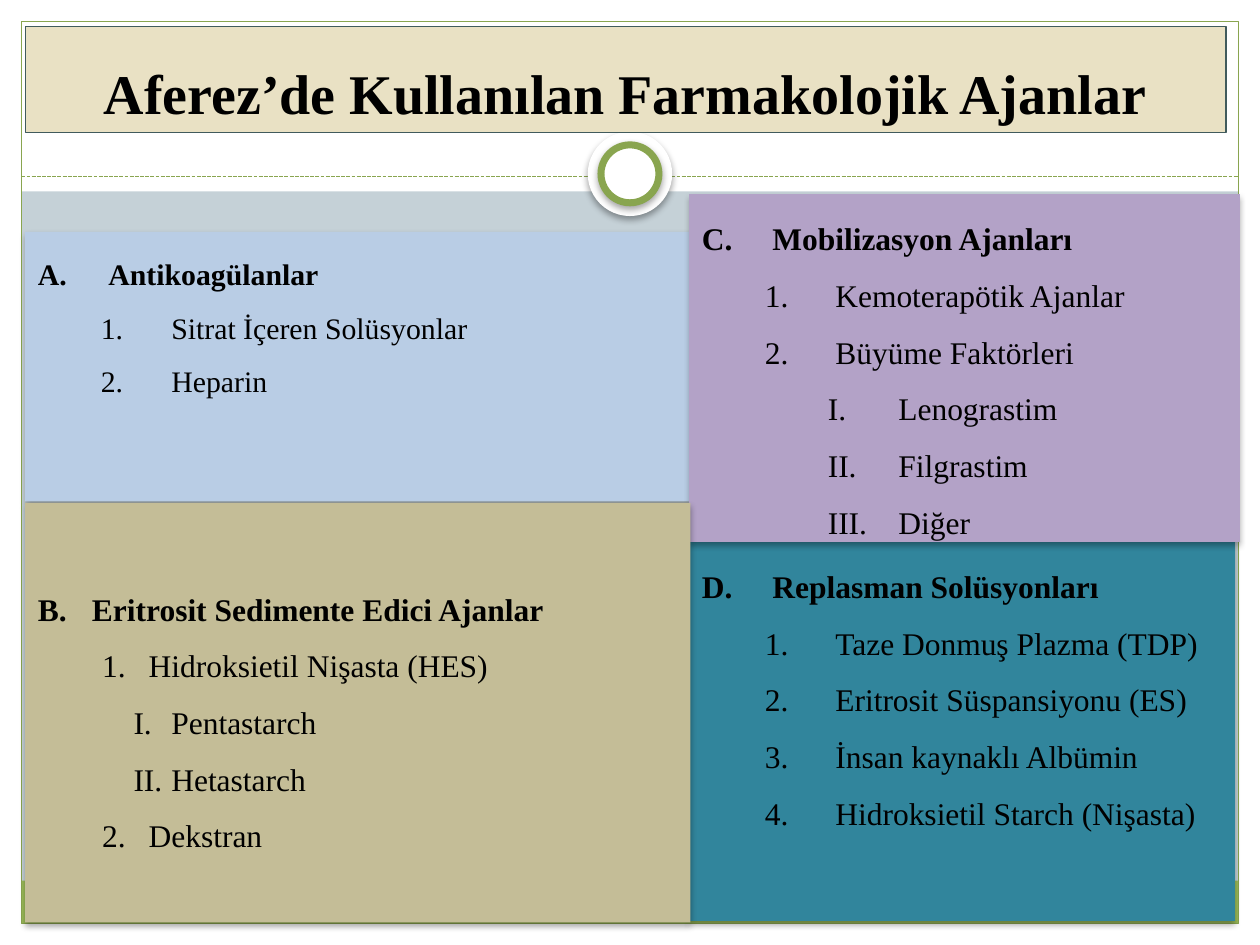
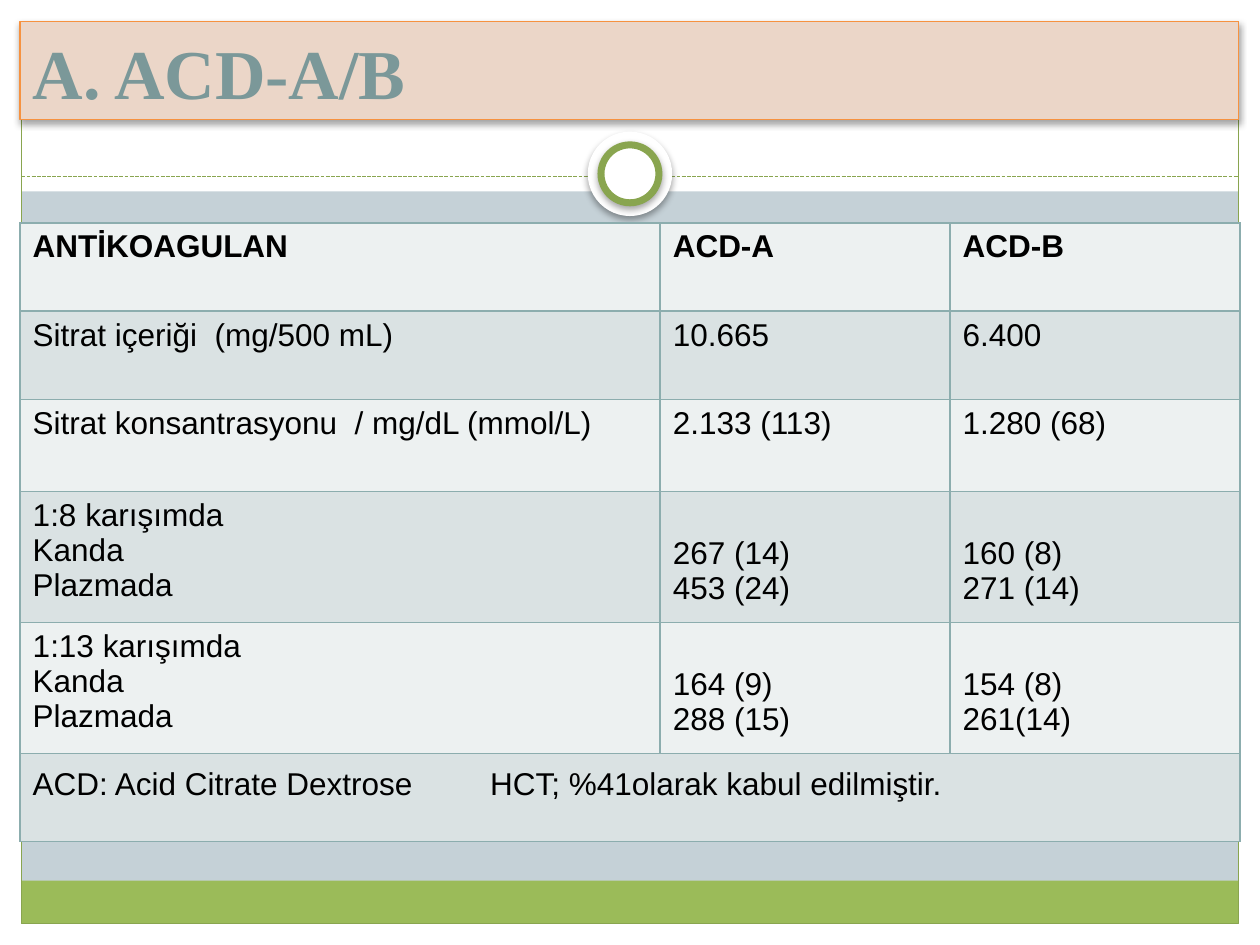
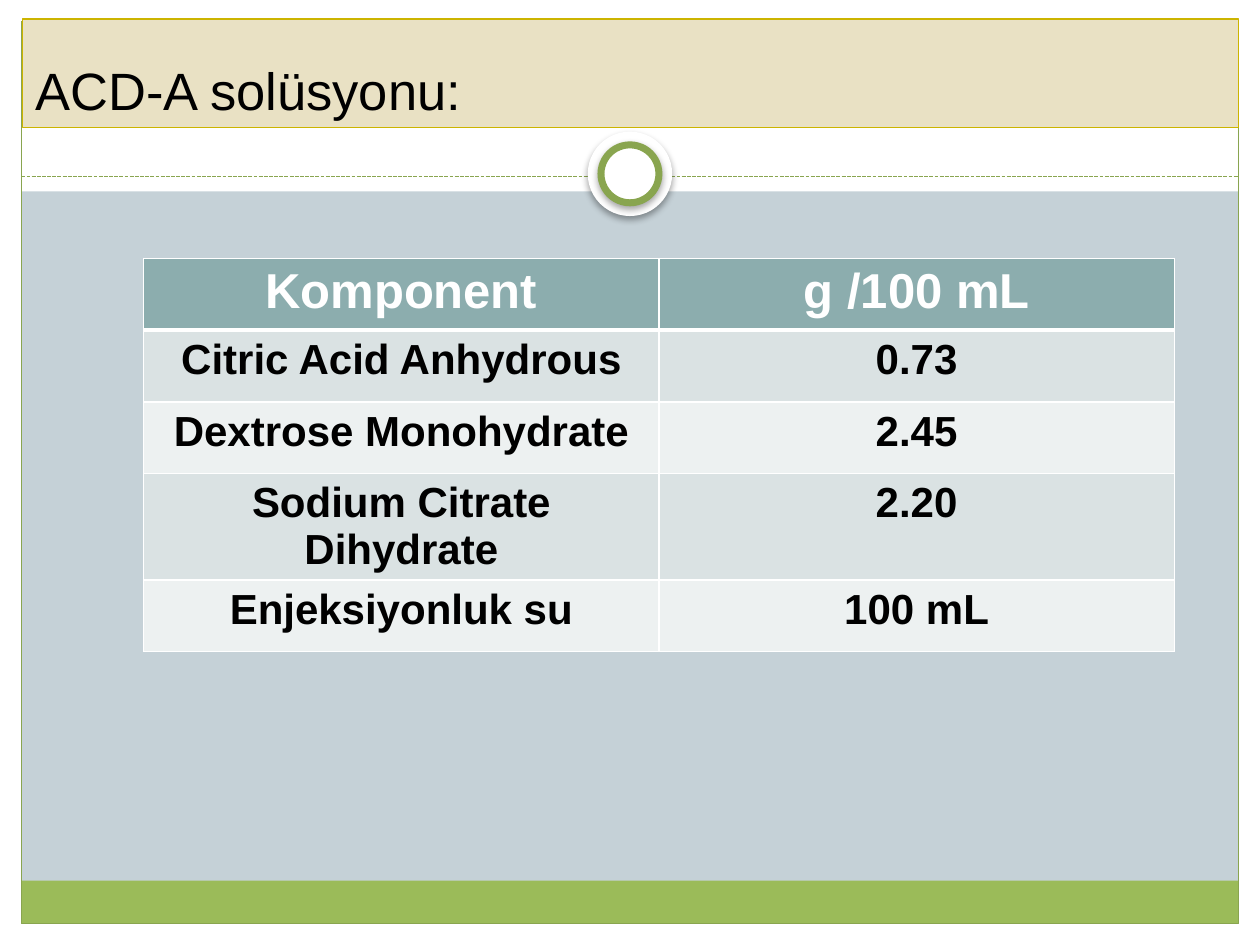
from lxml.etree import SubElement
from pptx import Presentation
from pptx.dml.color import RGBColor
from pptx.enum.dml import MSO_LINE
from pptx.enum.shapes import MSO_CONNECTOR, MSO_SHAPE
from pptx.enum.text import MSO_ANCHOR, MSO_AUTO_SIZE, PP_ALIGN
from pptx.oxml.ns import qn
from pptx.util import Inches, Pt

SERIF, SANS = "Times New Roman", "Arial"
BLACK, WHITE = "000000", "FFFFFF"
GREEN, SAND, TEAL = "89A54F", "E9E1C4", "8CADAE"
PALE, SOFT = "EDF1F1", "DAE2E3"
RING, DROP = (35, 4, 2), (32, 3.5, 2.2)  # shadow: opacity %, blur, distance

deck = Presentation()
deck.slide_width, deck.slide_height = Inches(10), Inches(7.5)
COL = deck.slide_width // 10   # ten columns across
ROW = deck.slide_height / 7.5  # seven and a half rows down
EDGE, SPAN = 0.17, 9.66        # frame margin and width


def paint(shape, box, fill=None, line=None, width=0.75, shadow=None):
    """Place a shape in grid units and set its fill, line and shadow."""
    x, y, w, h = box
    shape.left, shape.width = int(x * COL), int(w * COL)
    shape.top, shape.height = int(y * ROW), int(h * ROW)
    if fill:
        shape.fill.solid()
        shape.fill.fore_color.rgb = RGBColor.from_string(fill)
    else:
        shape.fill.background()
    if line:
        shape.line.color.rgb = RGBColor.from_string(line)
        shape.line.width = Pt(width)
    else:
        shape.line.fill.background()
    effect = SubElement(shape.element.spPr, qn("a:effectLst"))
    if shadow:
        alpha, blur, dist = shadow
        outer = SubElement(effect, qn("a:outerShdw"), blurRad=str(Pt(blur)),
                           dist=str(Pt(dist)), dir="5400000", rotWithShape="0")
        tone = SubElement(outer, qn("a:srgbClr"), val=BLACK)
        SubElement(tone, qn("a:alpha"), val=str(alpha * 1000))


def ink(para, font, size, color=BLACK, bold=False, space=1.0):
    """Format a paragraph and its runs."""
    para.line_spacing = space
    para.space_before = Pt(0)
    for run in para.runs:
        run.font.name, run.font.size, run.font.bold = font, Pt(size), bold
        run.font.color.rgb = RGBColor.from_string(color)


# Slides: layout with four panels, then two with a title only
slides = [deck.slides.add_slide(deck.slide_layouts[n]) for n in (4, 5, 5)]

# Shared frame, drawn once and moved to the master
master = deck.slide_master
master.background.fill.solid()
master.background.fill.fore_color.rgb = RGBColor.from_string("C5D1D7")
shapes = slides[0].shapes
frame = []
for box, fill, line in [
    ((0, 7.33, 10, EDGE), WHITE, None),
    ((0, 0, 10, 1.52), WHITE, None),
    ((0, 0, EDGE, 7.5), WHITE, None),
    ((10 - EDGE, 0, EDGE, 7.5), WHITE, None),
    ((EDGE, 6.99, SPAN, 0.34), "9BBB59", None),
    ((EDGE, EDGE, SPAN, 7.16), None, GREEN),
]:
    band = shapes.add_shape(MSO_SHAPE.RECTANGLE, 0, 0, 0, 0)
    paint(band, box, fill, line)
    frame.append(band)
rule = shapes.add_connector(MSO_CONNECTOR.STRAIGHT, int(EDGE * COL), int(1.4 * ROW),
                            int((EDGE + SPAN) * COL), int(1.4 * ROW))
rule.line.color.rgb = RGBColor.from_string(GREEN)
rule.line.width = Pt(0.75)
rule.line.dash_style = MSO_LINE.SQUARE_DOT
SubElement(rule.element.spPr, qn("a:effectLst"))
frame.append(rule)
for size, line in [(0.67, None), (0.46, GREEN)]:
    disc = shapes.add_shape(MSO_SHAPE.OVAL, 0, 0, 0, 0)
    paint(disc, (5 - size / 2, 1.38 - size / 2, size, size), WHITE, line, 4, RING)
    frame.append(disc)
for place, part in enumerate(frame, 2):
    master.shapes.element.insert(place, part.element)

# Titles
heads = [
    ("Aferez’de Kullanılan Farmakolojik Ajanlar", (0.2, 0.21, 9.53, 0.84), SAND,
     "415B5C", None, SERIF, 32, BLACK, True, 1.0, PP_ALIGN.CENTER),
    ("A. ACD-A/B", (0.16, 0.17, 9.67, 0.78), "EBD6C8",
     "F69240", RING, SERIF, 40, "7B9899", True, 1.0, PP_ALIGN.LEFT),
    ("ACD-A solüsyonu:", (0.18, 0.15, 9.65, 0.86), SAND,
     "CCB400", None, SANS, 30, BLACK, False, 1.5, PP_ALIGN.LEFT),
]
for slide, (text, box, fill, line, shadow, font, size, color, bold, space, align) in zip(slides, heads):
    head = slide.shapes.title
    paint(head, box, fill, line, shadow=shadow)
    head.text_frame.text = text
    head.text_frame.auto_size = MSO_AUTO_SIZE.NONE
    head.text_frame.vertical_anchor = MSO_ANCHOR.BOTTOM
    para = head.text_frame.paragraphs[0]
    para.alignment = align
    ink(para, font, size, color, bold, space)

# Slide 1: four lettered panels, each line with its level
WIDE = [(0.56, 0.56), (1.06, 0.56), (1.56, 0.56)]  # indent, hang by level
TIGHT = [(0.43, 0.43), (0.88, 0.37), (1.06, 0.3)]
STYLES = ["alphaUcPeriod", "arabicPeriod", "romanUcPeriod"]
panels = [
    (1, (0.2, 1.84, 5.28, 2.14), "B9CDE5", 17, MSO_ANCHOR.TOP, WIDE, [
        (0, "Antikoagülanlar"), (1, "Sitrat İçeren Solüsyonlar"), (1, "Heparin")]),
    (4, (5.47, 4.3, 4.33, 3.01), "31859C", 18, MSO_ANCHOR.TOP, WIDE, [
        (0, "Replasman Solüsyonları"), (1, "Taze Donmuş Plazma (TDP)"),
        (1, "Eritrosit Süspansiyonu (ES)"), (1, "İnsan kaynaklı Albümin"),
        (1, "Hidroksietil Starch (Nişasta)")]),
    (3, (5.47, 1.54, 4.37, 2.76), "B3A2C7", 18, MSO_ANCHOR.TOP, WIDE, [
        (0, "Mobilizasyon Ajanları"), (1, "Kemoterapötik Ajanlar"),
        (1, "Büyüme Faktörleri"), (2, "Lenograstim"), (2, "Filgrastim"), (2, "Diğer")]),
    (2, (0.2, 3.99, 5.28, 3.33), "C4BD97", 18, MSO_ANCHOR.MIDDLE, TIGHT, [
        (0, "Eritrosit Sedimente Edici Ajanlar"), (1, "Hidroksietil Nişasta (HES)"),
        (2, "Pentastarch"), (2, "Hetastarch"), (1, "Dekstran")]),
]
bodies = list(slides[0].placeholders)[1:]
for body, (start, box, fill, size, anchor, steps, lines) in zip(bodies, panels):
    paint(body, box, fill, shadow=DROP)
    text = body.text_frame
    text.text = "\n".join(line for level, line in lines)
    text.auto_size = MSO_AUTO_SIZE.NONE
    text.vertical_anchor = anchor
    for para, (level, line) in zip(text.paragraphs, lines):
        para.level = level
        ink(para, SERIF, size, BLACK, level == 0, 1.5)
        props = para._p.get_or_add_pPr()
        left, hang = steps[level]
        props.set("marL", str(Inches(left)))
        props.set("indent", str(-Inches(hang)))
        SubElement(SubElement(props, qn("a:buClr")), qn("a:srgbClr"), val=BLACK)
        SubElement(props, qn("a:buFont"), typeface=SERIF)
        mark = SubElement(props, qn("a:buAutoNum"), type=STYLES[level])
        if level == 0:
            mark.set("startAt", str(start))

# Slides 2 and 3: tables
acd = [
    ["ANTİKOAGULAN", "ACD-A", "ACD-B"],
    ["Sitrat içeriği  (mg/500 mL)", "10.665", "6.400"],
    ["Sitrat konsantrasyonu  / mg/dL (mmol/L)", "2.133 (113)", "1.280 (68)"],
    ["1:8 karışımda\nKanda\nPlazmada", "267 (14)\n453 (24)", "160 (8)\n271 (14)"],
    ["1:13 karışımda\nKanda\nPlazmada", "164 (9)\n288 (15)", "154 (8)\n261(14)"],
    ["ACD: Acid Citrate Dextrose\tHCT; %41olarak kabul edilmiştir.", "", ""],
]
mix = [
    ["Komponent", "g /100 mL"],
    ["Citric Acid Anhydrous", "0.73"],
    ["Dextrose Monohydrate", "2.45"],
    ["Sodium Citrate Dihydrate", "2.20"],
    ["Enjeksiyonluk su", "100 mL"],
]
# Each: rows, corner, column widths, row heights, border, head style, body style, fills, head rule, align
tables = [
    (acd, (0.16, 1.77), [5.08, 2.3, 2.3], [0.7, 0.7, 0.73, 1.04, 1.04, 0.7], TEAL,
     (18, BLACK, True), (18, BLACK, False), [PALE] + [SOFT, PALE] * 2 + [SOFT], 0.96, PP_ALIGN.LEFT),
    (mix, (1.14, 2.05), [4.09] * 2, [0.57] * 5, WHITE,
     (28, WHITE, True), (24, BLACK, True), [TEAL] + [SOFT, PALE] * 2, 3, PP_ALIGN.CENTER),
]
grids = []
for slide, (rows, (x, y), cols, highs, edge, top, rest, fills, thick, align) in zip(slides[1:], tables):
    grid = slide.shapes.add_table(len(rows), len(cols), int(x * COL), int(y * ROW),
                                  int(sum(cols) * COL), int(sum(highs) * ROW)).table
    grid.first_row = grid.horz_banding = False
    grids.append(grid)
    for col, wide in zip(grid.columns, cols):
        col.width = int(wide * COL)
    for r, (row, high) in enumerate(zip(rows, highs)):
        grid.rows[r].height = int(high * ROW)
        for c, text in enumerate(row):
            cell = grid.cell(r, c)
            cell.text_frame.text = text
            for para in cell.text_frame.paragraphs:
                para.alignment = align
                ink(para, SANS, *(rest if r else top))
            props = cell._tc.get_or_add_tcPr()
            for side in "LRTB":
                heavy = (r, side) in [(0, "B"), (1, "T")]
                line = SubElement(props, qn("a:ln" + side), w=str(Pt(thick if heavy else 0.96)))
                SubElement(SubElement(line, qn("a:solidFill")), qn("a:srgbClr"), val=edge)
            cell.fill.solid()
            cell.fill.fore_color.rgb = RGBColor.from_string(fills[r])

# Values of the mixtures line up with the last two labels
for r in (3, 4):
    for c in (1, 2):
        cell = grids[0].cell(r, c)
        cell.vertical_anchor = MSO_ANCHOR.BOTTOM
        cell.margin_bottom = Inches(0.13)

# Note row across the table, its second part at a tab stop
note = grids[0].cell(5, 0)
note.merge(grids[0].cell(5, 2))
para = note.text_frame.paragraphs[0]
para.line_spacing = 1.2
tabs = SubElement(para._p.get_or_add_pPr(), qn("a:tabLst"))
SubElement(tabs, qn("a:tab"), pos=str(Inches(3.63)), algn="l")

deck.save("out.pptx")
